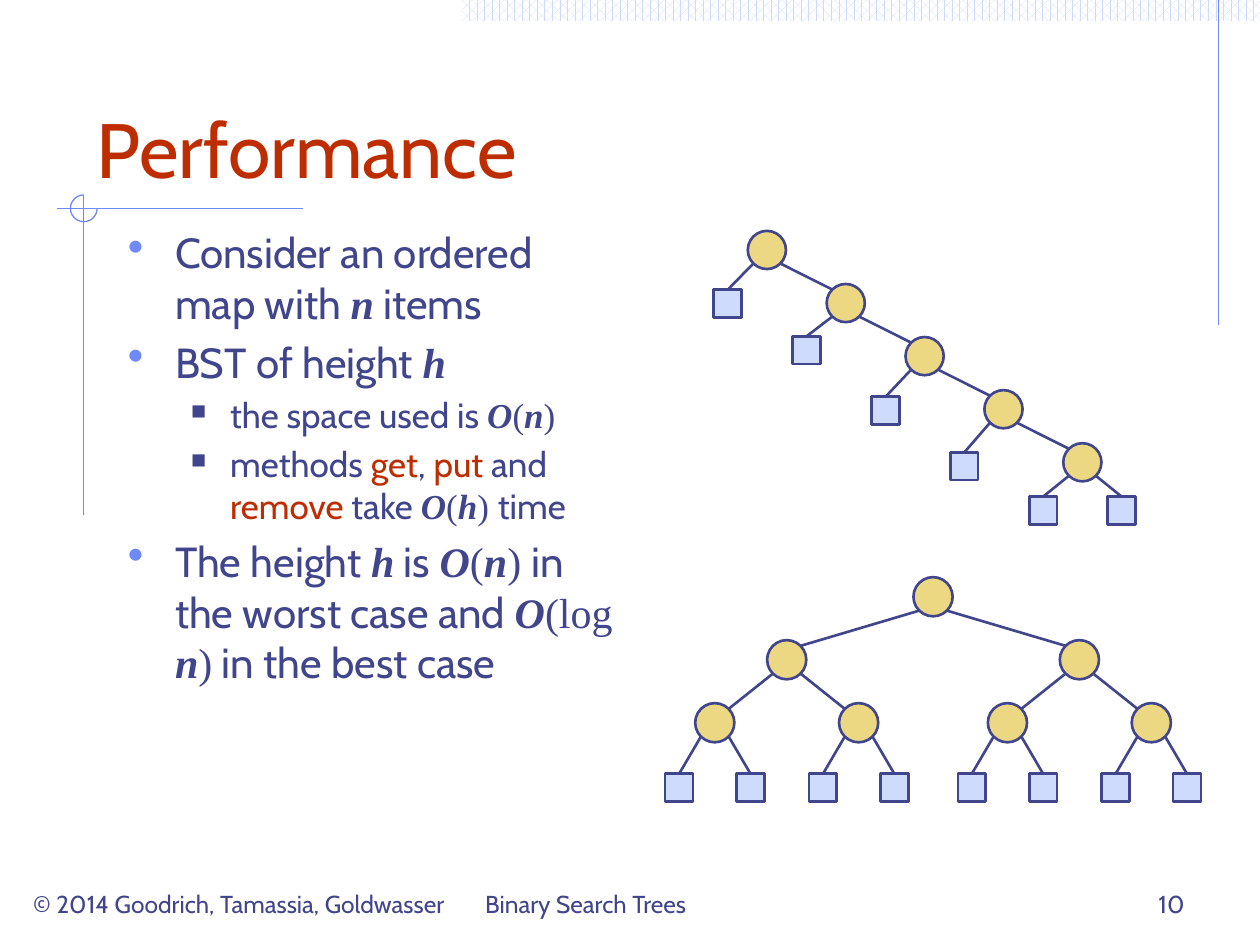
from lxml.etree import SubElement
from pptx import Presentation
from pptx.dml.color import RGBColor
from pptx.enum.dml import MSO_PATTERN
from pptx.enum.shapes import MSO_CONNECTOR, MSO_SHAPE
from pptx.enum.text import MSO_ANCHOR, PP_ALIGN
from pptx.oxml.ns import qn
from pptx.util import Cm, Pt

INK, RED, RULE = "40458C", "BE2D00", "6F89F7"
PALE, GOLD = "CFDBFD", "ECD882"
color = RGBColor.from_string

prs = Presentation()
prs.slide_width, prs.slide_height = Cm(25.4), Cm(19.05)
slide = prs.slides.add_slide(prs.slide_layouts[6])
shapes = slide.shapes


def add_line(x1, y1, x2, y2, hex_color, width):
    line = shapes.add_connector(MSO_CONNECTOR.STRAIGHT, Cm(x1), Cm(y1), Cm(x2), Cm(y2))
    line.line.color.rgb = color(hex_color)
    line.line.width = Pt(width)
    SubElement(line._element.spPr, qn("a:effectLst"))
    return line


def add_node(preset, center_x, top, size, hex_fill):
    node = shapes.add_shape(preset, Cm(center_x - size / 2), Cm(top), Cm(size), Cm(size))
    node.shadow.inherit = False
    node.fill.solid()
    node.fill.fore_color.rgb = color(hex_fill)
    node.line.color.rgb = color(INK)
    node.line.width = Pt(1.5)
    return node


# Decoration: patterned band, rules and the open circle where two rules cross
band = shapes.add_shape(MSO_SHAPE.RECTANGLE, Cm(9.31), Cm(0), Cm(16.09), Cm(0.42))
band.shadow.inherit = False
band.line.fill.background()
band.fill.patterned()
band.fill.pattern = MSO_PATTERN.PERCENT_60
band.fill.fore_color.rgb = color(PALE)
band.fill.back_color.rgb = color("FFFFFF")

for ends in [(24.56, 0, 24.56, 6.55), (6.1, 4.21, 1.14, 4.21), (1.69, 3.93, 1.69, 10.39)]:
    add_line(*ends, RULE, 0.75)

crossing = shapes.add_shape(MSO_SHAPE.ARC, Cm(1.42), Cm(3.93), Cm(0.54), Cm(0.54))
crossing.shadow.inherit = False
crossing.adjustments[0] = 0
crossing.adjustments[1] = 162  # 270 degrees
crossing.fill.background()
crossing.line.color.rgb = color(RULE)
crossing.line.width = Pt(0.75)

# Title and footer
labels = [
    ("Performance", 1.69, 0.85, 22.23, 3.18, 44, RED, PP_ALIGN.LEFT),
    ("© 2014 Goodrich, Tamassia, Goldwasser", 0.42, 17.36, 9.53, 1.27, 14, INK, PP_ALIGN.LEFT),
    ("Binary Search Trees", 9.53, 17.36, 8.04, 1.27, 14, INK, PP_ALIGN.LEFT),
    ("10", 18.2, 17.36, 5.93, 1.27, 14, INK, PP_ALIGN.RIGHT),
]
for text, left, top, width, height, size, ink, align in labels:
    frame = shapes.add_textbox(Cm(left), Cm(top), Cm(width), Cm(height)).text_frame
    frame.word_wrap = True
    frame.vertical_anchor = MSO_ANCHOR.BOTTOM
    paragraph = frame.paragraphs[0]
    paragraph.alignment = align
    run = paragraph.add_run()
    run.text = text
    run.font.name = "Cabin"
    run.font.size = Pt(size)
    run.font.color.rgb = color(ink)

# Bullet text
styles = {
    "plain": ({"name": "Cabin"}, INK),
    "method": ({"name": "Cabin"}, RED),
    "math": ({"name": "Times New Roman"}, INK),
    "symbol": ({"name": "Times New Roman", "bold": True, "italic": True}, INK),
}
levels = [
    {"size": 24, "before": 5, "left": 0.95, "hang": 0.95, "bullet": "•", "ink": RULE, "percent": 110},
    {"size": 20, "before": 4, "left": 2.06, "hang": 0.79, "bullet": "■", "ink": INK, "percent": 60},
]
points = [
    (0, [("plain", "Consider an ordered map with "), ("symbol", "n"), ("plain", " items")]),
    (0, [("plain", "BST of height "), ("symbol", "h")]),
    (1, [("plain", "the space used is "), ("symbol", "O"), ("math", "("), ("symbol", "n"),
         ("math", ")")]),
    (1, [("plain", "methods "), ("method", "get"), ("plain", ", "), ("method", "put "),
         ("plain", "and "), ("method", "remove"), ("plain", " take "), ("symbol", "O"),
         ("math", "("), ("symbol", "h"), ("math", ") "), ("plain", "time")]),
    (0, [("plain", "The height "), ("symbol", "h"), ("plain", " is "), ("symbol", "O"),
         ("math", "("), ("symbol", "n"), ("math", ") "), ("plain", "in the worst case and "),
         ("symbol", "O"), ("math", "(log "), ("symbol", "n"), ("math", ")"),
         ("plain", " in the best case")]),
]
body = shapes.add_textbox(Cm(2.33), Cm(4.45), Cm(10.37), Cm(12.9)).text_frame
body.word_wrap = True
for index, (depth, runs) in enumerate(points):
    level = levels[depth]
    paragraph = body.add_paragraph() if index else body.paragraphs[0]
    paragraph.level = depth
    props = paragraph._p.get_or_add_pPr()
    props.set("marL", str(Cm(level["left"])))
    props.set("indent", str(-Cm(level["hang"])))
    SubElement(SubElement(props, qn("a:buClr")), qn("a:srgbClr")).set("val", level["ink"])
    SubElement(props, qn("a:buSzPct")).set("val", str(level["percent"] * 1000))
    SubElement(props, qn("a:buChar")).set("char", level["bullet"])
    if index:
        paragraph.space_before = Pt(level["before"])
    for style, text in runs:
        run = paragraph.add_run()
        run.text = text
        run.font.size = Pt(level["size"])
        font_values, ink = styles[style]
        for attribute, value in font_values.items():
            setattr(run.font, attribute, value)
        run.font.color.rgb = color(ink)

# Trees: each link is (parent centre, side, child x, child y, child is a leaf);
# y is the centre of an inner node and the top of a leaf
spine = [(15.46 + 1.59 * i, 5.04 + 1.07 * i) for i in range(5)]
leaf_tops = [5.84, 6.78, 8, 9.12, 10.01]
worst_links = [(node, -1, node[0] - 0.79, top, True) for node, top in zip(spine, leaf_tops)]
worst_links += [(node, 1, *child, False) for node, child in zip(spine, spine[1:])]
worst_links.append((spine[-1], 1, spine[-1][0] + 0.79, leaf_tops[-1], True))

best_root = (18.81, 12.03)
best_links = []
parents = [best_root]
for spread, y, is_leaf in [(2.95, 13.3, False), (1.45, 14.57, False), (0.72, 15.6, True)]:
    level_links = [(parent, side, parent[0] + side * spread, y, is_leaf)
                   for parent in parents for side in (-1, 1)]
    best_links += level_links
    parents = [(x, y) for _, _, x, y, _ in level_links]

for root, links, diameter in [(spine[0], worst_links, 0.77), (best_root, best_links, 0.79)]:
    diagonal = diameter / 2 * 0.71  # edges meet circles at 45 degrees
    add_node(MSO_SHAPE.OVAL, root[0], root[1] - diameter / 2, diameter, GOLD)
    for (parent_x, parent_y), side, x, y, is_leaf in links:
        start = (parent_x + side * diagonal, parent_y + diagonal)
        if is_leaf:
            leaf = add_node(MSO_SHAPE.RECTANGLE, x, y, 0.56, PALE)
            add_line(*start, x, y, INK, 1.5).end_connect(leaf, 0)
        else:
            add_node(MSO_SHAPE.OVAL, x, y - diameter / 2, diameter, GOLD)
            add_line(*start, x - side * diagonal, y - diagonal, INK, 1.5)

prs.save("out.pptx")
